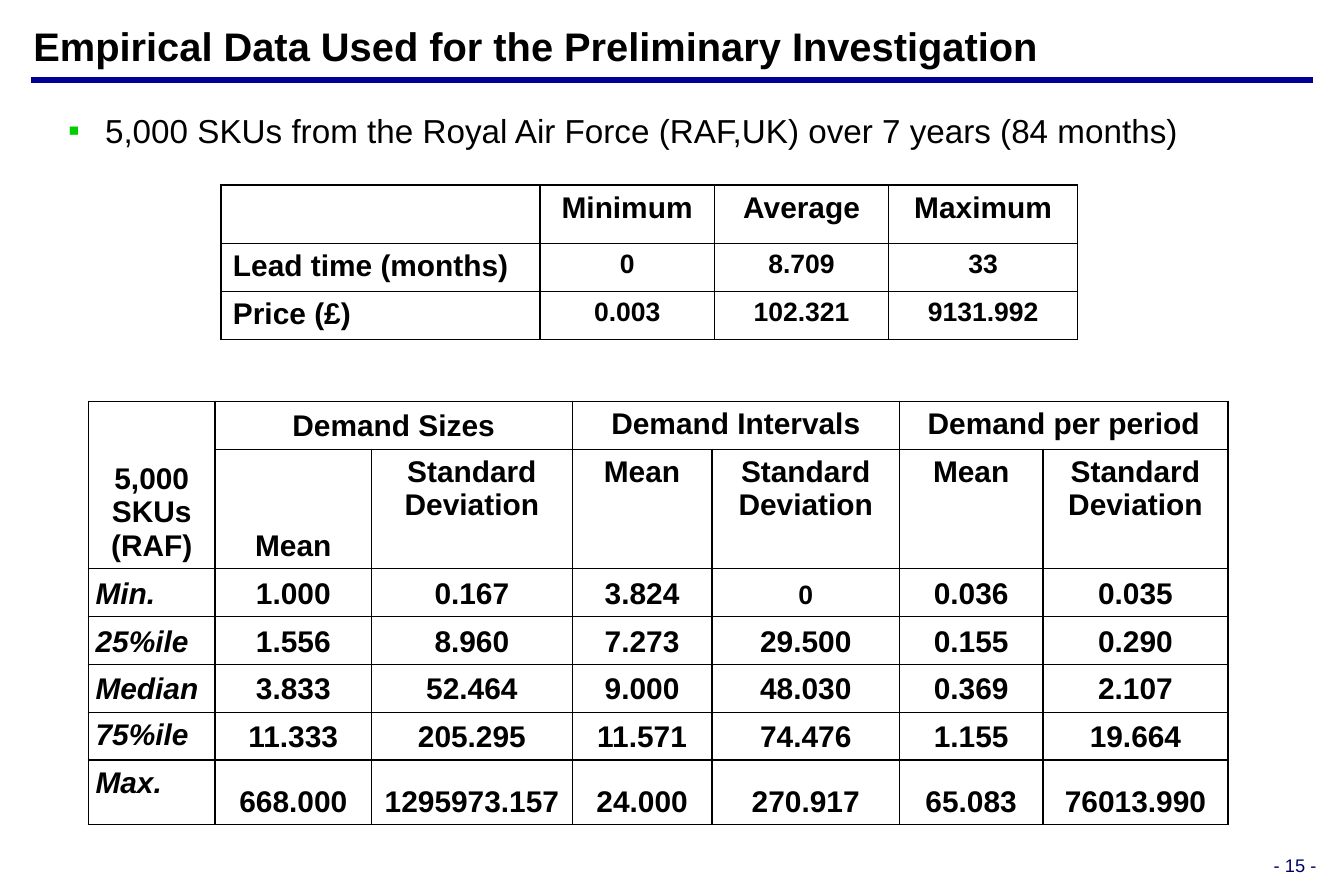
from lxml import etree
from pptx import Presentation
from pptx.dml.color import RGBColor
from pptx.enum.shapes import MSO_CONNECTOR
from pptx.enum.text import MSO_ANCHOR, PP_ALIGN
from pptx.oxml.ns import qn
from pptx.util import Pt

LEFT, CENTER, RIGHT = PP_ALIGN.LEFT, PP_ALIGN.CENTER, PP_ALIGN.RIGHT
TOP, BOTTOM = MSO_ANCHOR.TOP, MSO_ANCHOR.BOTTOM
STRAIGHT = MSO_CONNECTOR.STRAIGHT
PX = 9144  # 100 px to the inch
BLACK = "000000"

# Content
TITLE = "Empirical Data Used for the Preliminary Investigation"
SAMPLE = "5,000 SKUs from the Royal Air Force (RAF,UK) over 7 years (84 months)"
PAGE = "- 15 -"

COSTS = [
    ("", "Minimum", "Average", "Maximum"),
    ("Lead time (months)", "0", "8.709", "33"),
    ("Price (£)", "0.003", "102.321", "9131.992"),
]
COST_COLUMNS, COST_ROWS = (267, 146, 146, 158), (49, 38, 38)

SPREAD = "Standard\nDeviation"
DEMAND = [
    ("5,000\nSKUs\n(RAF)", "Demand Sizes", "", "Demand Intervals", "", "Demand per period", ""),
    ("", "Mean", SPREAD, "Mean", SPREAD, "Mean", SPREAD),
    ("Min.", "1.000", "0.167", "3.824", "0", "0.036", "0.035"),
    ("25%ile", "1.556", "8.960", "7.273", "29.500", "0.155", "0.290"),
    ("Median", "3.833", "52.464", "9.000", "48.030", "0.369", "2.107"),
    ("75%ile", "11.333", "205.295", "11.571", "74.476", "1.155", "19.664"),
    ("Max.", "668.000", "1295973.157", "24.000", "270.917", "65.083", "76013.990"),
]
DEMAND_COLUMNS = (106, 131, 168, 117, 157, 120, 155)
DEMAND_ROWS = (40, 100, 40, 40, 40, 40, 54)
DEMAND_MERGES = [((0, 0), (1, 0))] + [((0, c), (0, c + 1)) for c in (1, 3, 5)]


def color(hex_code):
    return RGBColor.from_string(hex_code)


def write(frame, text, size=18, fill=BLACK, bold=False, italic=False, align=LEFT):
    for number, line in enumerate(text.split("\n")):
        paragraph = frame.add_paragraph() if number else frame.paragraphs[0]
        paragraph.alignment = align
        run = paragraph.add_run()
        run.text = line
        font = run.font
        font.name, font.size, font.bold, font.italic = "Arial", Pt(size), bold, italic
        font.color.rgb = color(fill)


def set_margins(owner, across, down):
    owner.margin_left = owner.margin_right = across * PX
    owner.margin_top = owner.margin_bottom = down * PX


def add_text(box, text, margins, anchor, **style):
    frame = slide.shapes.add_textbox(*(n * PX for n in box)).text_frame
    frame.word_wrap = True
    frame.vertical_anchor = anchor
    set_margins(frame, *margins)
    write(frame, text, **style)
    return frame


def add_borders(cell):
    properties = cell._tc.get_or_add_tcPr()
    for place, side in enumerate(("lnL", "lnR", "lnT", "lnB")):
        border = etree.Element(qn("a:" + side), w=str(Pt(1)))
        fill = etree.SubElement(border, qn("a:solidFill"))
        etree.SubElement(fill, qn("a:srgbClr"), val=BLACK)
        properties.insert(place, border)


def add_grid(left, top, columns, heights, rows, margins, style_of, merges=()):
    grid = slide.shapes.add_table(len(rows), len(columns), left * PX, top * PX,
                                  sum(columns) * PX, sum(heights) * PX).table
    grid.first_row = grid.horz_banding = False
    for column, width in zip(grid.columns, columns):
        column.width = width * PX
    for row, height in zip(grid.rows, heights):
        row.height = height * PX
    for r, values in enumerate(rows):
        for c, value in enumerate(values):
            cell = grid.cell(r, c)
            cell.fill.background()
            add_borders(cell)
            set_margins(cell, *margins)
            anchor, style = style_of(r, c)
            cell.vertical_anchor = anchor
            if value:
                write(cell.text_frame, value, bold=True, **style)
    for first, last in merges:
        grid.cell(*first).merge(grid.cell(*last))


def cost_style(r, c):
    return TOP, {"size": 16 if r and c else 18, "align": CENTER if c else LEFT}


def demand_style(r, c):
    is_label = r > 1 and c == 0
    at_top = (r < 2 and c > 1) or (r > 4 and c == 0)
    return TOP if at_top else BOTTOM, {
        "size": 16 if DEMAND[r][c] == "0" else 18,
        "italic": is_label,
        "align": LEFT if is_label else CENTER,
    }


presentation = Presentation()
presentation.slide_width, presentation.slide_height = 1125 * PX, 750 * PX
slide = presentation.slides.add_slide(presentation.slide_layouts[6])

# Title, rule and page number
add_text((28, 18, 1067, 40), TITLE, (0, 0), BOTTOM, size=24, bold=True)
rule = slide.shapes.add_connector(STRAIGHT, 26 * PX, 67 * PX, 1099 * PX, 67 * PX)
rule.line.color.rgb = color("000099")
rule.line.width = Pt(4)
etree.SubElement(rule._element.spPr, qn("a:effectLst"))
add_text((1046, 712, 63, 24), PAGE, (7, 3), BOTTOM, size=11, fill="000066", align=RIGHT)

# Bulleted description of the sample
sample = add_text((51, 91, 1039, 40), SAMPLE, (6, 5), TOP, size=20).paragraphs[0]
sample.line_spacing = 0.9
bullet = sample._p.get_or_add_pPr()
bullet.set("marL", str(31 * PX))
bullet.set("indent", str(-31 * PX))
bullet_color = etree.SubElement(bullet, qn("a:buClr"))
etree.SubElement(bullet_color, qn("a:srgbClr"), val="00CC00")
etree.SubElement(bullet, qn("a:buFont"), typeface="Arial")
etree.SubElement(bullet, qn("a:buChar"), char="▪")

# Tables
add_grid(185, 155, COST_COLUMNS, COST_ROWS, COSTS, (10, 5), cost_style)
add_grid(74, 336, DEMAND_COLUMNS, DEMAND_ROWS, DEMAND, (6, 5), demand_style, DEMAND_MERGES)

presentation.save("out.pptx")
